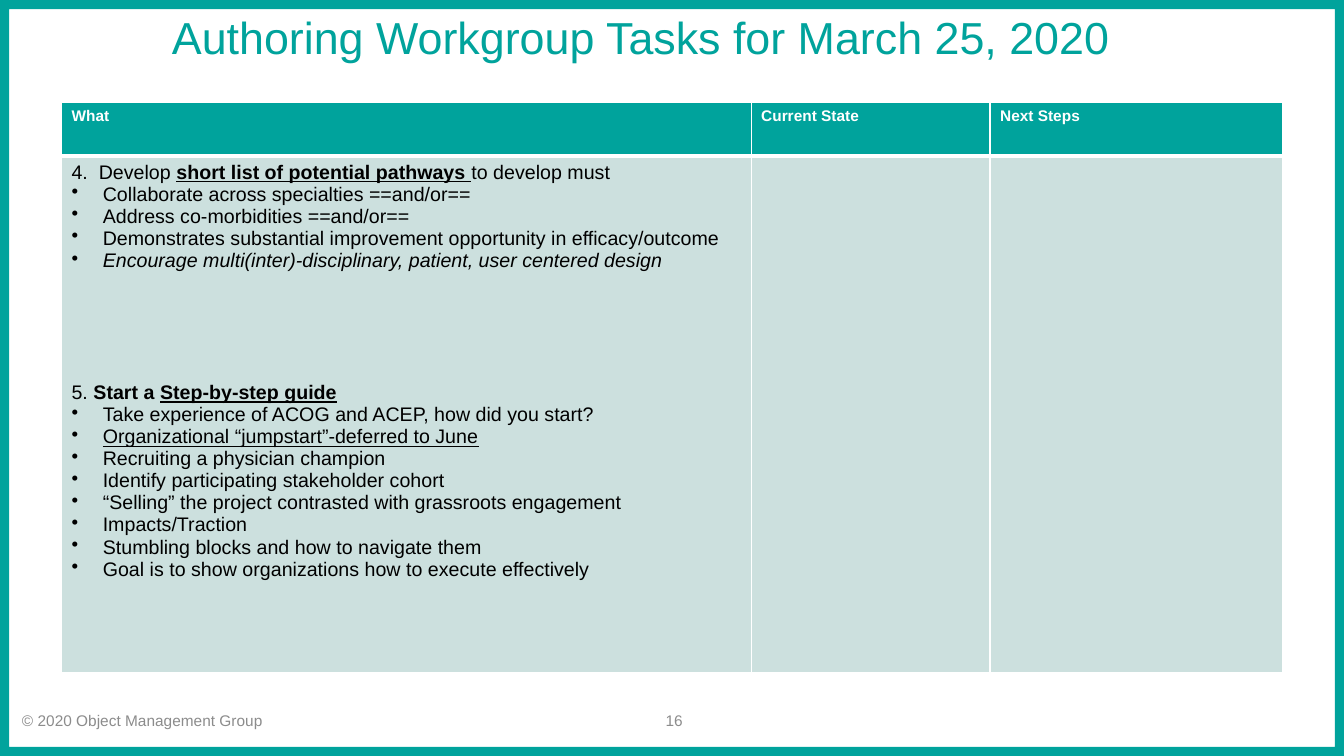
import pptx
import pptx.dml.color
import pptx.enum.shapes
import pptx.enum.text
import pptx.oxml
import pptx.oxml.ns
import pptx.util
from pptx.util import Inches

COLORS = {
    "teal": "00A39C",
    "pale": "CCE0DE",
    "white": "FFFFFF",
    "black": "000000",
    "gray": "8C8C8C",
}
ALIGN = pptx.enum.text.PP_ALIGN
HEADERS = ["What", "Current State", "Next Steps"]
COLUMN_WIDTHS = [6.84, 2.37, 2.9]
ROW_HEIGHTS = [0.53, 5.12]
TASKS = [
    (
        [("4.  Develop ", ""), ("short list of potential pathways ", "bu"), ("to develop must", "")],
        [
            ("Collaborate across specialties ==and/or==", ""),
            ("Address co-morbidities ==and/or==", ""),
            ("Demonstrates substantial improvement opportunity in efficacy/outcome", ""),
            ("Encourage multi(inter)-disciplinary, patient, user centered design", "i"),
        ],
    ),
    (
        [("5. ", ""), ("Start a ", "b"), ("Step-by-step guide", "bu")],
        [
            ("Take experience of ACOG and ACEP, how did you start?", ""),
            ("Organizational “jumpstart”-deferred to June", "u"),
            ("Recruiting a physician champion", ""),
            ("Identify participating stakeholder cohort", ""),
            ("“Selling” the project contrasted with grassroots engagement", ""),
            ("Impacts/Traction", ""),
            ("Stumbling blocks and how to navigate them", ""),
            ("Goal is to show organizations how to execute effectively", ""),
        ],
    ),
]


class SlideBuilder:
    font_name = "Arial"

    def __init__(self, slide):
        self.slide = slide

    def color(self, name):
        return pptx.dml.color.RGBColor.from_string(COLORS[name])

    def style(self, paragraph, size, color, bold=False):
        font = paragraph.font
        font.name = self.font_name
        font.size = pptx.util.Pt(size)
        font.bold = bold
        font.color.rgb = self.color(color)

    def frame(self, width, height, color):
        shape = self.slide.shapes.add_shape(
            pptx.enum.shapes.MSO_SHAPE.FRAME, 0, 0, width, height
        )
        shape.adjustments[0] = 0.012
        shape.shadow.inherit = False
        shape.fill.solid()
        shape.fill.fore_color.rgb = self.color(color)
        shape.line.fill.background()

    def text(self, text, box, size, color, align=ALIGN.LEFT, line_spacing=1.0):
        shape = self.slide.shapes.add_textbox(*map(Inches, box))
        shape.text_frame.word_wrap = True
        shape.text_frame.vertical_anchor = pptx.enum.text.MSO_ANCHOR.MIDDLE
        paragraph = shape.text_frame.paragraphs[0]
        paragraph.text = text
        paragraph.alignment = align
        paragraph.line_spacing = line_spacing
        self.style(paragraph, size, color)

    def table(self, left, top, widths, heights):
        table = self.slide.shapes.add_table(
            len(heights), len(widths), Inches(left), Inches(top),
            Inches(sum(widths)), Inches(sum(heights)),
        ).table
        table.horz_banding = False
        for column, width in zip(table.columns, widths):
            column.width = Inches(width)
        for row, height in zip(table.rows, heights):
            row.height = Inches(height)
        return table

    def cell(self, cell, fill, bottom_width=1):
        properties = cell._tc.get_or_add_tcPr()
        for side, width in {"L": 1, "R": 1, "T": 1, "B": bottom_width}.items():
            properties.append(pptx.oxml.parse_xml(
                f'<a:ln{side} {pptx.oxml.ns.nsdecls("a")} w="{pptx.util.Pt(width)}">'
                f'<a:solidFill><a:srgbClr val="{COLORS["white"]}"/></a:solidFill></a:ln{side}>'
            ))
        cell.fill.solid()
        cell.fill.fore_color.rgb = self.color(fill)

    def bullet(self, paragraph):
        properties = paragraph._p.get_or_add_pPr()
        properties.set("marL", str(Inches(0.31)))
        properties.set("indent", str(Inches(-0.31)))
        properties.append(pptx.oxml.parse_xml(
            f'<a:buChar {pptx.oxml.ns.nsdecls("a")} char="•"/>'
        ))

    def runs(self, paragraph, runs):
        self.style(paragraph, 14, "black")
        for text, marks in runs:
            run = paragraph.add_run()
            run.text = text
            run.font.bold = "b" in marks
            run.font.italic = "i" in marks
            run.font.underline = "u" in marks

    def tasks(self, text_frame, tasks):
        for number, (heading, items) in enumerate(tasks):
            paragraph = text_frame.add_paragraph() if number else text_frame.paragraphs[0]
            if number:
                paragraph.space_before = pptx.util.Pt(79)
            self.runs(paragraph, heading)
            for item in items:
                paragraph = text_frame.add_paragraph()
                self.bullet(paragraph)
                self.runs(paragraph, [item])


def main():
    presentation = pptx.Presentation()
    presentation.slide_width = Inches(13.33)
    presentation.slide_height = Inches(7.5)
    slide = presentation.slides.add_slide(presentation.slide_layouts[6])
    builder = SlideBuilder(slide)

    builder.frame(presentation.slide_width, presentation.slide_height, "teal")
    table = builder.table(0.61, 1.02, COLUMN_WIDTHS, ROW_HEIGHTS)
    for column, header in enumerate(HEADERS):
        header_cell = table.cell(0, column)
        builder.cell(header_cell, "teal", bottom_width=3)
        header_cell.text = header
        builder.style(header_cell.text_frame.paragraphs[0], 11, "white", bold=True)
        builder.cell(table.cell(1, column), "pale")
    builder.tasks(table.cell(1, 0).text_frame, TASKS)

    builder.text("Authoring Workgroup Tasks for March 25, 2020",
                 (0.61, -0.33, 11.5, 1.45), 32, "teal", ALIGN.CENTER, 0.9)
    builder.text("© 2020 Object Management Group", (0.12, 6.95, 4.36, 0.4), 11, "gray")
    builder.text("16", (6.46, 6.95, 0.41, 0.4), 11, "gray", ALIGN.RIGHT)
    presentation.save("out.pptx")


if __name__ == "__main__":
    main()
